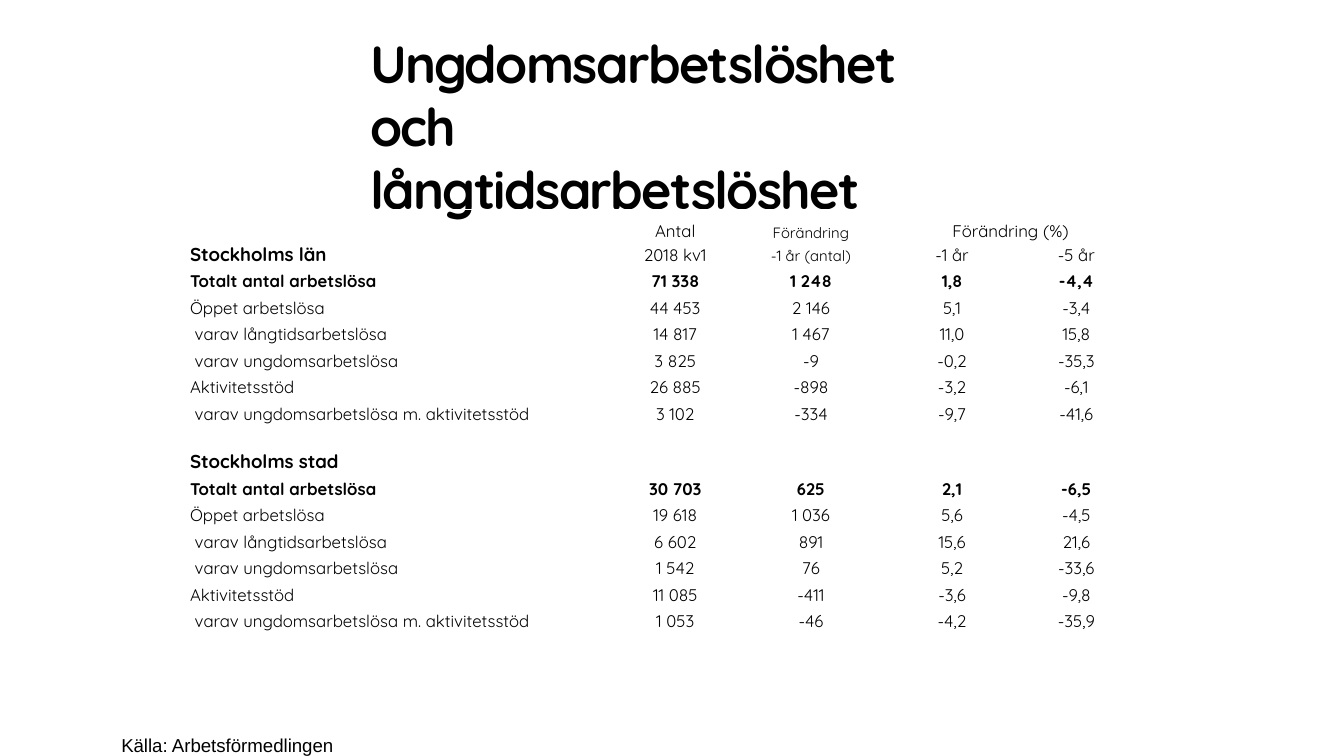
from lxml import etree
from pptx import Presentation
from pptx import util as u
from pptx.dml import color
from pptx.enum import text
from pptx.oxml import ns

FONT = "Quicksand"
BLACK = "000000"
COLUMN_WIDTHS = [228.24, 64.8, 80.64, 70.56, 62.64]
ROW_HEIGHT = 14.2
ROW_HEIGHTS = {0: 17.28, 1: 12.24, 8: 12}
INDENT = 2.5
LABELS = [
    "Totalt antal arbetslösa",
    "Öppet arbetslösa",
    "varav långtidsarbetslösa",
    "varav ungdomsarbetslösa",
    "Aktivitetsstöd",
    "varav ungdomsarbetslösa m. aktivitetsstöd",
]
COUNTY = [
    ["71 338", "1 248", "1,8", "-4,4"],
    ["44 453", "2 146", "5,1", "-3,4"],
    ["14 817", "1 467", "11,0", "15,8"],
    ["3 825", "-9", "-0,2", "-35,3"],
    ["26 885", "-898", "-3,2", "-6,1"],
    ["3 102", "-334", "-9,7", "-41,6"],
]
CITY = [
    ["30 703", "625", "2,1", "-6,5"],
    ["19 618", "1 036", "5,6", "-4,5"],
    ["6 602", "891", "15,6", "21,6"],
    ["1 542", "76", "5,2", "-33,6"],
    ["11 085", "-411", "-3,6", "-9,8"],
    ["1 053", "-46", "-4,2", "-35,9"],
]


def rgb(value):
    """Turn a hex string into a colour."""
    return color.RGBColor.from_string(value)


def write(frame, words, size=9, font=FONT, fill=BLACK, bold=False,
          align=text.PP_ALIGN.LEFT, line=None, tracking=None, indent=0):
    """Write one formatted paragraph into a text frame."""
    para = frame.paragraphs[0]
    para.alignment = align
    if line:
        para.line_spacing = line
    if indent:
        para._p.get_or_add_pPr().set("marL", str(u.Pt(indent)))
    span = para.add_run()
    span.text = words
    span.font.size = u.Pt(size)
    span.font.name = font
    span.font.bold = bold
    span.font.color.rgb = rgb(fill)
    if tracking:
        span._r.get_or_add_rPr().set("spc", str(round(tracking * 100)))


def add_text(page, words, left, top, width, height, **style):
    """Add a wrapping text box without margins."""
    box = page.shapes.add_textbox(u.Pt(left), u.Pt(top), u.Pt(width), u.Pt(height))
    frame = box.text_frame
    frame.word_wrap = True
    frame.margin_left = frame.margin_right = 0
    frame.margin_top = frame.margin_bottom = 0
    write(frame, words, **style)


def fill_cell(cell, words, **style):
    """Format a table cell and write its words, if any."""
    cell.fill.background()
    cell.vertical_anchor = text.MSO_ANCHOR.BOTTOM
    cell.margin_left = cell.margin_right = cell.margin_top = u.Pt(0.72)
    cell.margin_bottom = 0
    if words:
        write(cell.text_frame, words, **style)
    else:
        end = etree.SubElement(cell.text_frame.paragraphs[0]._p, ns.qn("a:endParaRPr"))
        end.set("sz", "800")


def cell_style(row, column, words):
    """Find the text format for a cell from its place and words."""
    if column:
        size = 8 if column == 2 and row < 2 else 9
        return dict(size=size, bold=row in (2, 10), align=text.PP_ALIGN.CENTER)
    heading = words.startswith("Stockholms")
    return dict(size=10 if heading else 9,
                bold=heading or words == LABELS[0],
                indent=INDENT if words.startswith("varav") else 0)


def add_statistics(page, left, top):
    """Add the unemployment table for county and city."""
    rows = [
        ["", "Antal", "Förändring", "Förändring (%)", ""],
        ["Stockholms län", "2018 kv1", "-1 år (antal)", "-1 år", "-5 år"],
        *([label, *values] for label, values in zip(LABELS, COUNTY)),
        [""] * 5,
        ["Stockholms stad"] + [""] * 4,
        *([label, *values] for label, values in zip(LABELS, CITY)),
    ]
    heights = [ROW_HEIGHTS.get(index, ROW_HEIGHT) for index in range(len(rows))]
    table = page.shapes.add_table(
        len(rows), len(COLUMN_WIDTHS), u.Pt(left), u.Pt(top),
        u.Pt(sum(COLUMN_WIDTHS)), u.Pt(sum(heights))).table
    table.first_row = table.horz_banding = False
    for column, width in zip(table.columns, COLUMN_WIDTHS):
        column.width = u.Pt(width)
    for row, (values, height) in enumerate(zip(rows, heights)):
        table.rows[row].height = u.Pt(height)
        for column, words in enumerate(values):
            fill_cell(table.cell(row, column), words, **cell_style(row, column, words))
    table.cell(0, 3).merge(table.cell(0, 4))


def main():
    """Build the slide and save it."""
    deck = Presentation()
    deck.slide_width, deck.slide_height = u.Pt(720), u.Pt(405)
    page = deck.slides.add_slide(deck.slide_layouts[6])
    add_text(page, "Ungdomsarbetslöshet och långtidsarbetslöshet",
             198.3, 16.8, 311.76, 44.64, size=28, bold=True, tracking=-0.9)
    add_text(page, "Källa: Arbetsförmedlingen", 65, 381.2, 144, 23.8,
             size=10, font="Arial", line=u.Pt(24))
    add_statistics(page, 101.1, 112.32)
    deck.save("out.pptx")


if __name__ == "__main__":
    main()
